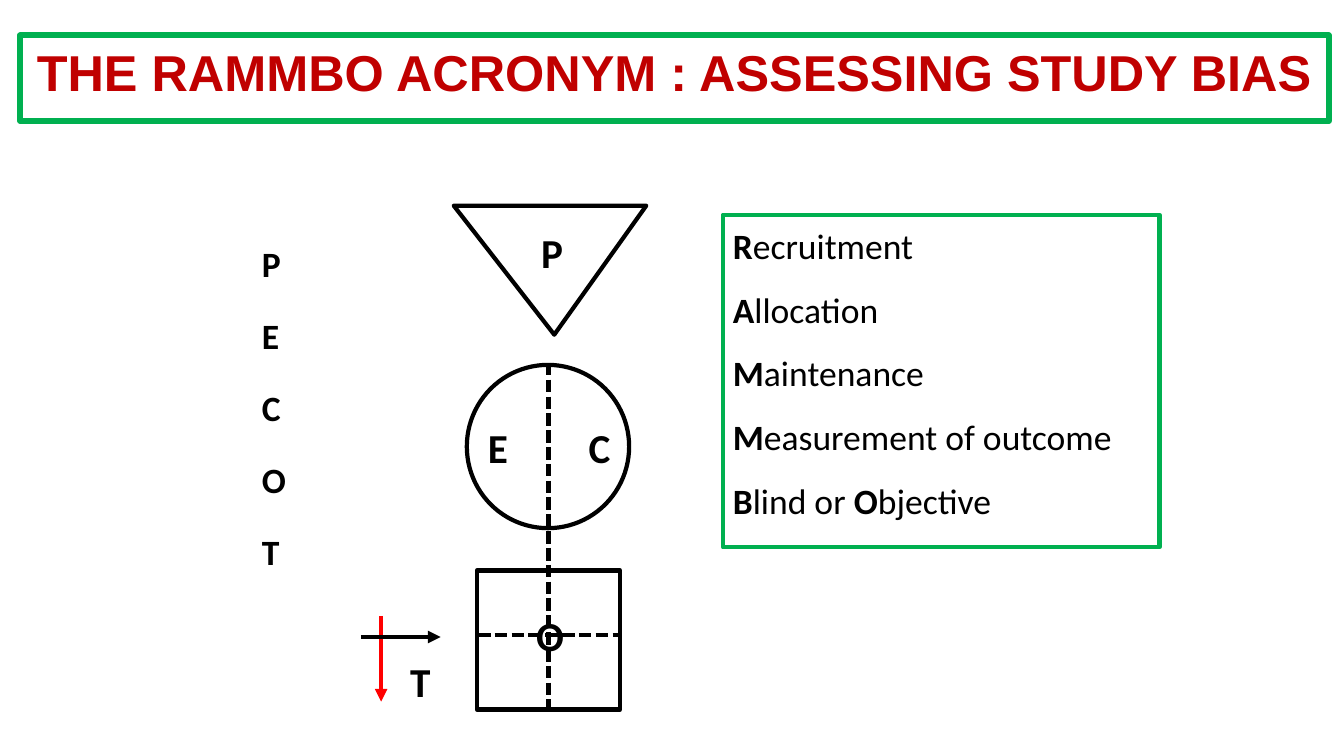
from pptx import Presentation
from pptx.dml.color import RGBColor
from pptx.enum.dml import MSO_LINE
from pptx.enum.shapes import MSO_CONNECTOR, MSO_SHAPE
from pptx.enum.text import MSO_ANCHOR, MSO_AUTO_SIZE, PP_ALIGN
from pptx.oxml.ns import qn
from pptx.util import Inches, Pt
from lxml import etree

RECTANGLE, OVAL = MSO_SHAPE.RECTANGLE, MSO_SHAPE.OVAL
TRIANGLE = MSO_SHAPE.ISOSCELES_TRIANGLE
STRAIGHT = MSO_CONNECTOR.STRAIGHT
DOTTED = MSO_LINE.SQUARE_DOT
TOP, MIDDLE = MSO_ANCHOR.TOP, MSO_ANCHOR.MIDDLE
LEFT, CENTER = PP_ALIGN.LEFT, PP_ALIGN.CENTER
FIXED_SIZE = MSO_AUTO_SIZE.NONE

BLACK, RED, DARK_RED, GREEN = "000000", "FF0000", "C00000", "00B050"

# Each line is a list of (bold initial, plain remainder) pairs.
RAMMBO = [
    [("R", "ecruitment")],
    [("A", "llocation")],
    [("M", "aintenance")],
    [("M", "easurement of outcome")],
    [("B", "lind or "), ("O", "bjective")],
]
DIAGRAM_LETTERS = [
    ("P", 5.27, 2.13),
    ("E", 4.74, 4.07),
    ("C", 5.74, 4.07),
    ("O", 5.22, 5.93),
    ("T", 3.97, 6.39),
]


def color(hex_string):
    return RGBColor.from_string(hex_string)


def write_text(shape, lines, size, font="Calibri", text_color=BLACK, align=LEFT,
               anchor=TOP, margins=(0.1, 0.05), spacing=1.0, before=0, hanging=0):
    """Fill a shape with lines, each a list of (bold, plain) text pairs."""
    frame = shape.text_frame
    frame.word_wrap = True
    frame.auto_size = FIXED_SIZE
    frame.vertical_anchor = anchor
    frame.margin_left = frame.margin_right = Inches(margins[0])
    frame.margin_top = frame.margin_bottom = Inches(margins[1])
    for index, pairs in enumerate(lines):
        paragraph = frame.add_paragraph() if index else frame.paragraphs[0]
        paragraph.alignment = align
        paragraph.line_spacing = spacing
        paragraph.space_before = Pt(before)
        if hanging:
            properties = paragraph._p.get_or_add_pPr()
            properties.set("marL", str(Inches(hanging)))
            properties.set("indent", str(-Inches(hanging)))
        for pair in pairs:
            for text, bold in zip(pair, (True, False)):
                if text:
                    run = paragraph.add_run()
                    run.text = text
                    run.font.name = font
                    run.font.size = Pt(size)
                    run.font.bold = bold
                    run.font.color.rgb = color(text_color)


def set_outline(shape, line_color, width):
    shape.fill.background()
    shape.line.color.rgb = color(line_color)
    shape.line.width = Pt(width)


def add_outline(slide, kind, left, top, width, height, line_color=BLACK):
    shape = slide.shapes.add_shape(
        kind, Inches(left), Inches(top), Inches(width), Inches(height))
    shape.shadow.inherit = False
    set_outline(shape, line_color, 3)
    return shape


def add_line(slide, start, end, line_color=BLACK, dash=None, arrow=False):
    line = slide.shapes.add_connector(
        STRAIGHT, *(Inches(value) for value in (*start, *end)))
    line.line.color.rgb = color(line_color)
    line.line.width = Pt(3)
    if dash:
        line.line.dash_style = dash
    if arrow:
        etree.SubElement(line.line._get_or_add_ln(), qn("a:tailEnd"), type="triangle")
    etree.SubElement(line._element.spPr, qn("a:effectLst"))


def add_text(slide, left, top, width, height, lines, size, **text_format):
    box = slide.shapes.add_textbox(
        Inches(left), Inches(top), Inches(width), Inches(height))
    write_text(box, lines, size, **text_format)


def add_title(slide, text):
    title = slide.shapes.title
    title.left, title.top = Inches(0.2), Inches(0.35)
    title.width, title.height = Inches(12.98), Inches(0.85)
    set_outline(title, GREEN, 4)
    write_text(title, [[(text, "")]], 36, font="Arial", text_color=DARK_RED,
               align=CENTER, margins=(0.13, 0.13), spacing=0.9)


def add_pecot_diagram(slide):
    for letter, left, top in DIAGRAM_LETTERS:
        add_text(slide, left, top, 0.5, 0.74, [[(letter, "")]], 29.4, anchor=MIDDLE)
    add_line(slide, (3.78, 6.11), (3.78, 6.96), RED, arrow=True)
    add_outline(slide, OVAL, 4.63, 3.62, 1.61, 1.62)
    add_outline(slide, RECTANGLE, 4.73, 5.66, 1.42, 1.38)
    add_line(slide, (5.44, 3.6), (5.44, 7.01), dash=DOTTED)
    triangle = add_outline(slide, TRIANGLE, 4.5, 2.04, 1.91, 1.28)
    triangle.rotation = 180
    triangle.adjustments[0] = 0.478
    add_line(slide, (4.74, 6.3), (6.13, 6.3), dash=DOTTED)
    add_line(slide, (3.58, 6.32), (4.37, 6.32), arrow=True)


def main():
    presentation = Presentation()
    presentation.slide_width = Inches(13.33)
    presentation.slide_height = Inches(7.5)
    slide = presentation.slides.add_slide(presentation.slide_layouts[5])
    add_title(slide, "THE RAMMBO ACRONYM : ASSESSING STUDY BIAS")
    add_pecot_diagram(slide)
    add_text(slide, 2.5, 2.22, 0.73, 3.73, [[(letter, "")] for letter in "PECOT"],
             25.4, spacing=1.3, before=12)
    rammbo_box = add_outline(slide, RECTANGLE, 7.17, 2.13, 4.33, 3.3, GREEN)
    write_text(rammbo_box, RAMMBO, 25.4, spacing=1.1, before=12, hanging=0.33)
    presentation.save("out.pptx")


if __name__ == "__main__":
    main()
